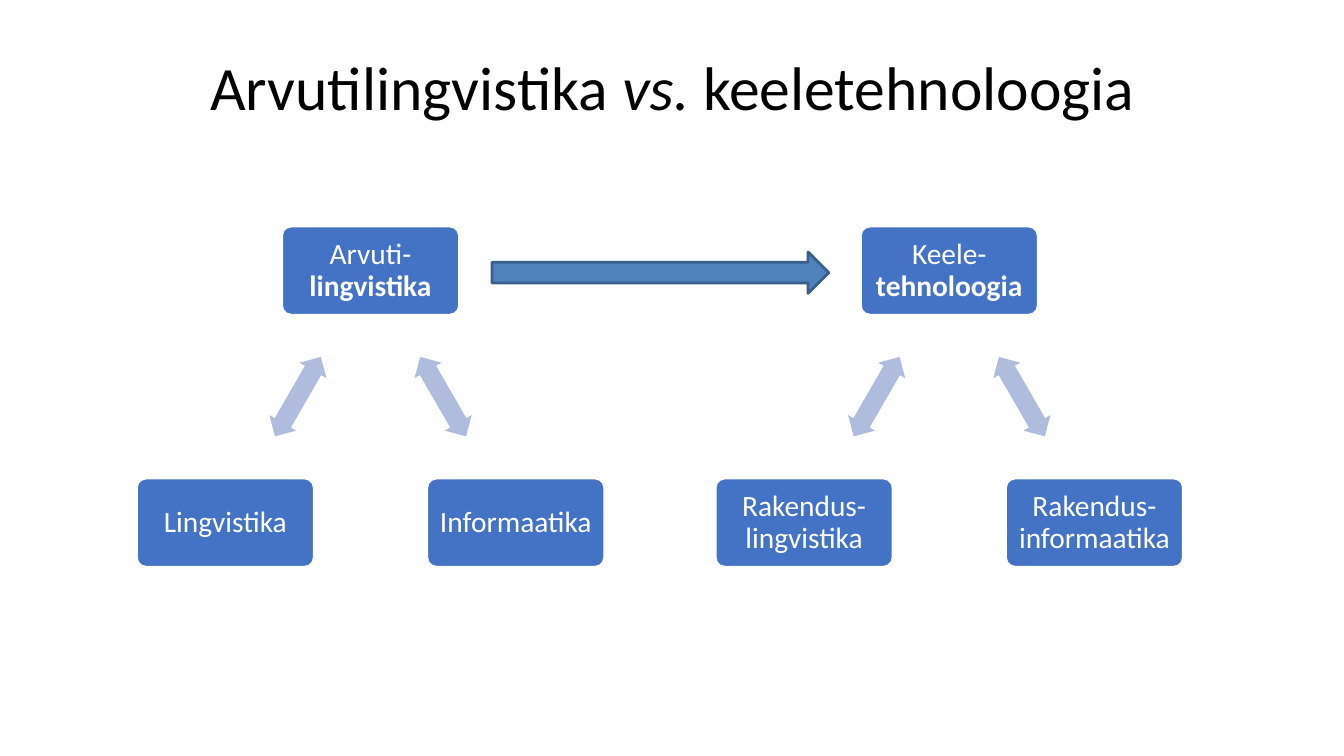
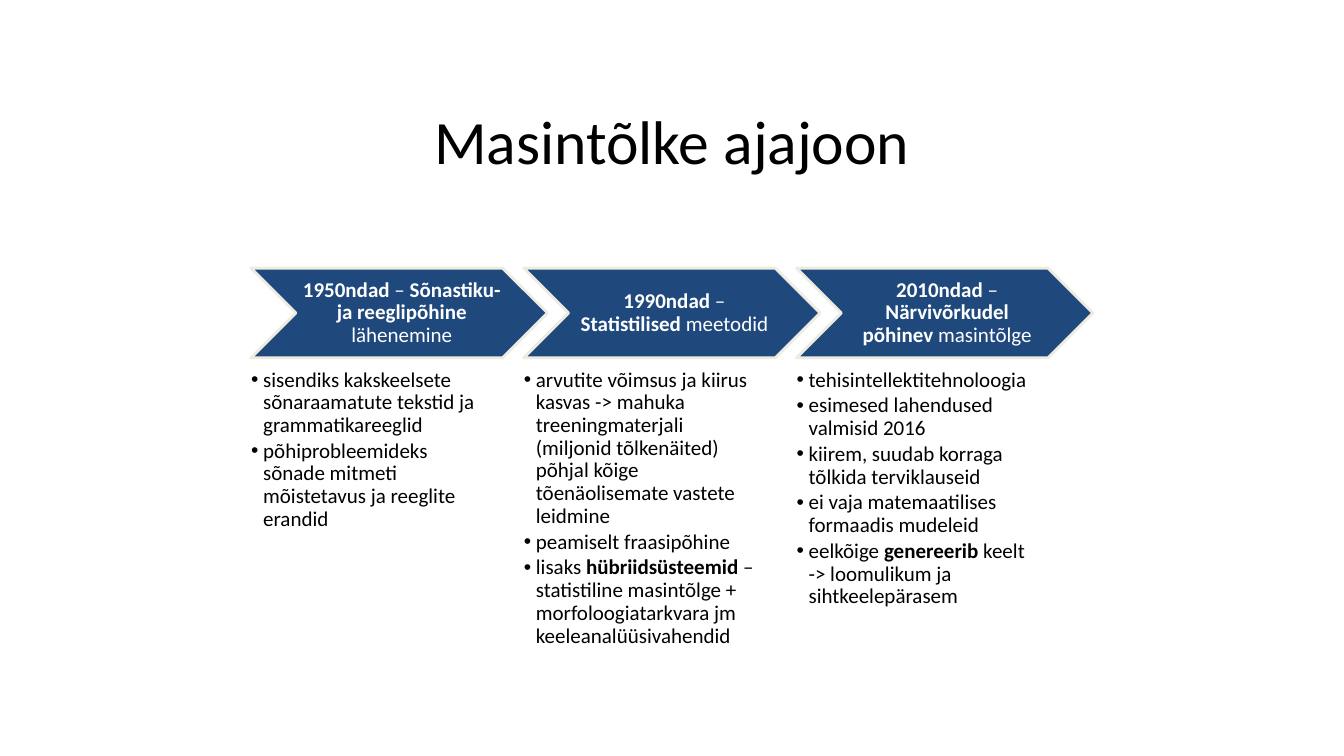
from dataclasses import dataclass
from typing import NamedTuple, Optional

from lxml.etree import SubElement
from pptx import Presentation
from pptx.dml.color import RGBColor
from pptx.enum.shapes import MSO_SHAPE
from pptx.enum.text import MSO_ANCHOR, MSO_AUTO_SIZE, PP_ALIGN
from pptx.oxml.ns import qn
from pptx.presentation import Presentation as Deck
from pptx.shapes.autoshape import Shape
from pptx.slide import Slide
from pptx.text.text import TextFrame, _Paragraph as Paragraph
from pptx.util import Inches, Pt

FONT = "Calibri"
BLACK = RGBColor(0x00, 0x00, 0x00)
WHITE = RGBColor(0xFF, 0xFF, 0xFF)
BOX_BLUE = RGBColor(0x44, 0x72, 0xC4)
LINK_BLUE = RGBColor(0xB0, 0xBC, 0xDE)
ARROW_BLUE = RGBColor(0x4F, 0x81, 0xBD)
ARROW_EDGE = RGBColor(0x3A, 0x5F, 0x8C)
CHEVRON_BLUE = RGBColor(0x1F, 0x49, 0x7D)
CHEVRON_EDGE = RGBColor(0xEE, 0xEC, 0xE1)

TITLE_ONLY_LAYOUT = 5
COMPARISON_LAYOUT = 4

BOX_WIDTH, BOX_HEIGHT = 1.75, 0.87
PARENT_TOP, CHILD_TOP = 2.25, 4.75
CHILD_OFFSET = 1.44
LINK_WIDTH, LINK_HEIGHT, LINK_TOP = 0.91, 0.31, 3.78
LINK_OFFSET = 0.72

ERA_LEFT, ERA_STEP = 2.49, 2.705
CHEVRON_TOP, CHEVRON_WIDTH, CHEVRON_HEIGHT = 2.66, 2.94, 0.89
LIST_TOP, LIST_WIDTH, LIST_HEIGHT = 3.66, 2.35, 2.85


class Area(NamedTuple):
    left: float
    top: float
    width: float
    height: float


class Span(NamedTuple):
    text: str
    bold: bool = False
    italic: bool = False


Line = tuple[Span, ...]


@dataclass(frozen=True)
class Triangle:
    left: float
    parent: Line
    children: tuple[str, str]


@dataclass(frozen=True)
class Era:
    heading: Line
    points: tuple[Line, ...]


TRIANGLES = (
    Triangle(2.8, (Span("Arvuti-"), Span("lingvistika", bold=True)),
             ("Lingvistika", "Informaatika")),
    Triangle(8.54, (Span("Keele-"), Span("tehnoloogia", bold=True)),
             ("Rakendus-lingvistika", "Rakendus-informaatika")),
)

ERAS = (
    Era(
        (Span("1950ndad", bold=True), Span(" – "),
         Span("Sõnastiku- ja reeglipõhine ", bold=True), Span("lähenemine")),
        (
            (Span("sisendiks kakskeelsete sõnaraamatute tekstid ja grammatikareeglid"),),
            (Span("põhiprobleemideks sõnade mitmeti mõistetavus ja reeglite erandid"),),
        ),
    ),
    Era(
        (Span("1990ndad", bold=True), Span(" – "),
         Span("Statistilised", bold=True), Span(" meetodid")),
        (
            (Span("arvutite võimsus ja kiirus kasvas -> mahuka treeningmaterjali "
                  "(miljonid tõlkenäited) põhjal kõige tõenäolisemate vastete leidmine"),),
            (Span("peamiselt fraasipõhine"),),
            (Span("lisaks "), Span("hübriidsüsteemid", bold=True),
             Span(" – statistiline masintõlge + morfoloogiatarkvara jm "
                  "keeleanalüüsivahendid")),
        ),
    ),
    Era(
        (Span("2010ndad", bold=True), Span(" – "),
         Span("Närvivõrkudel põhinev ", bold=True), Span("masintõlge")),
        (
            (Span("tehisintellektitehnoloogia"),),
            (Span("esimesed lahendused valmisid 2016"),),
            (Span("kiirem, suudab korraga tõlkida terviklauseid"),),
            (Span("ei vaja matemaatilises formaadis mudeleid"),),
            (Span("eelkõige "), Span("genereerib", bold=True),
             Span(" keelt -> loomulikum ja sihtkeelepärasem")),
        ),
    ),
)


def place(shape: Shape, area: Area) -> None:
    shape.left, shape.top, shape.width, shape.height = map(Inches, area)


def set_margins(text_frame: TextFrame, left: float, others: float) -> None:
    text_frame.margin_left = Inches(left)
    text_frame.margin_top = Inches(others)
    text_frame.margin_right = Inches(others)
    text_frame.margin_bottom = Inches(others)


def write_line(paragraph: Paragraph, line: Line, size: float, color: RGBColor) -> None:
    for span in line:
        run = paragraph.add_run()
        run.text = span.text
        run.font.name = FONT
        run.font.size = Pt(size)
        run.font.color.rgb = color
        run.font.bold = span.bold
        run.font.italic = span.italic


def add_titled_slide(presentation: Deck, layout: int, area: Area, line: Line) -> Slide:
    slide = presentation.slides.add_slide(presentation.slide_layouts[layout])
    title = slide.shapes.title
    place(title, area)
    title.text_frame.vertical_anchor = MSO_ANCHOR.MIDDLE
    paragraph = title.text_frame.paragraphs[0]
    paragraph.alignment = PP_ALIGN.CENTER
    write_line(paragraph, line, 44, BLACK)
    return slide


def add_filled_shape(slide: Slide, kind: MSO_SHAPE, area: Area, fill: RGBColor,
                     edge: Optional[RGBColor] = None, edge_width: float = 1) -> Shape:
    shape = slide.shapes.add_shape(kind, *map(Inches, area))
    shape.shadow.inherit = False
    shape.fill.solid()
    shape.fill.fore_color.rgb = fill
    if edge is None:
        shape.line.fill.background()
    else:
        shape.line.color.rgb = edge
        shape.line.width = Pt(edge_width)
    return shape


def add_label(shape: Shape, line: Line, size: float) -> None:
    text_frame = shape.text_frame
    text_frame.word_wrap = True
    text_frame.vertical_anchor = MSO_ANCHOR.MIDDLE
    paragraph = text_frame.paragraphs[0]
    paragraph.alignment = PP_ALIGN.CENTER
    paragraph.line_spacing = 0.9
    write_line(paragraph, line, size, WHITE)


def add_box(slide: Slide, left: float, top: float, line: Line) -> None:
    box = add_filled_shape(slide, MSO_SHAPE.ROUNDED_RECTANGLE,
                           Area(left, top, BOX_WIDTH, BOX_HEIGHT), BOX_BLUE, WHITE)
    box.adjustments[0] = 0.1
    set_margins(box.text_frame, 0.09, 0.09)
    add_label(box, line, 21)


def add_triangle(slide: Slide, triangle: Triangle) -> None:
    add_box(slide, triangle.left, PARENT_TOP, triangle.parent)
    link_center = triangle.left + (BOX_WIDTH - LINK_WIDTH) / 2
    for side, rotation, child in zip((-1, 1), (300, 60), triangle.children):
        add_box(slide, triangle.left + side * CHILD_OFFSET, CHILD_TOP, (Span(child),))
        link = add_filled_shape(
            slide, MSO_SHAPE.LEFT_RIGHT_ARROW,
            Area(link_center + side * LINK_OFFSET, LINK_TOP, LINK_WIDTH, LINK_HEIGHT),
            LINK_BLUE)
        link.adjustments[0] = 0.6
        link.adjustments[1] = 0.5
        link.rotation = rotation


def add_bullet(paragraph: Paragraph) -> None:
    properties = paragraph._p.get_or_add_pPr()
    properties.set("marL", str(Inches(0.12)))
    properties.set("indent", str(-Inches(0.12)))
    SubElement(properties, qn("a:buChar")).set("char", "•")


def fill_list(body: Shape, area: Area, points: tuple[Line, ...]) -> None:
    place(body, area)
    text_frame = body.text_frame
    text_frame.word_wrap = True
    text_frame.auto_size = MSO_AUTO_SIZE.NONE
    text_frame.vertical_anchor = MSO_ANCHOR.TOP
    set_margins(text_frame, 0, 0)
    for index, point in enumerate(points):
        paragraph = text_frame.add_paragraph() if index else text_frame.paragraphs[0]
        add_bullet(paragraph)
        paragraph.alignment = PP_ALIGN.LEFT
        paragraph.line_spacing = 0.9
        paragraph.space_before = Pt(0)
        paragraph.space_after = Pt(2.25)
        write_line(paragraph, point, 15, BLACK)


def add_era(slide: Slide, body: Shape, left: float, era: Era) -> None:
    chevron = add_filled_shape(
        slide, MSO_SHAPE.CHEVRON,
        Area(left, CHEVRON_TOP, CHEVRON_WIDTH, CHEVRON_HEIGHT),
        CHEVRON_BLUE, CHEVRON_EDGE, 2)
    set_margins(chevron.text_frame, 0.07, 0.02)
    add_label(chevron, era.heading, 15)
    fill_list(body, Area(left, LIST_TOP, LIST_WIDTH, LIST_HEIGHT), era.points)


def build_comparison(presentation: Deck) -> None:
    slide = add_titled_slide(
        presentation, TITLE_ONLY_LAYOUT, Area(0.67, 0.3, 12, 1.11),
        (Span("Arvutilingvistika "), Span("vs. ", italic=True), Span("keeletehnoloogia")))
    for triangle in TRIANGLES:
        add_triangle(slide, triangle)
    add_filled_shape(slide, MSO_SHAPE.RIGHT_ARROW, Area(4.88, 2.5, 3.34, 0.41),
                     ARROW_BLUE, ARROW_EDGE, 2)


def build_timeline(presentation: Deck) -> None:
    slide = add_titled_slide(
        presentation, COMPARISON_LAYOUT, Area(2.38, 0.66, 8.57, 1.45),
        (Span("Masintõlke ajajoon"),))
    bodies = list(slide.placeholders)[1:]
    for index, (body, era) in enumerate(zip(bodies, ERAS)):
        add_era(slide, body, ERA_LEFT + index * ERA_STEP, era)
    for unused in bodies[len(ERAS):]:
        unused.element.getparent().remove(unused.element)


def main() -> None:
    presentation = Presentation()
    presentation.slide_width = Inches(13.33)
    presentation.slide_height = Inches(7.5)
    build_comparison(presentation)
    build_timeline(presentation)
    presentation.save("out.pptx")


if __name__ == "__main__":
    main()
